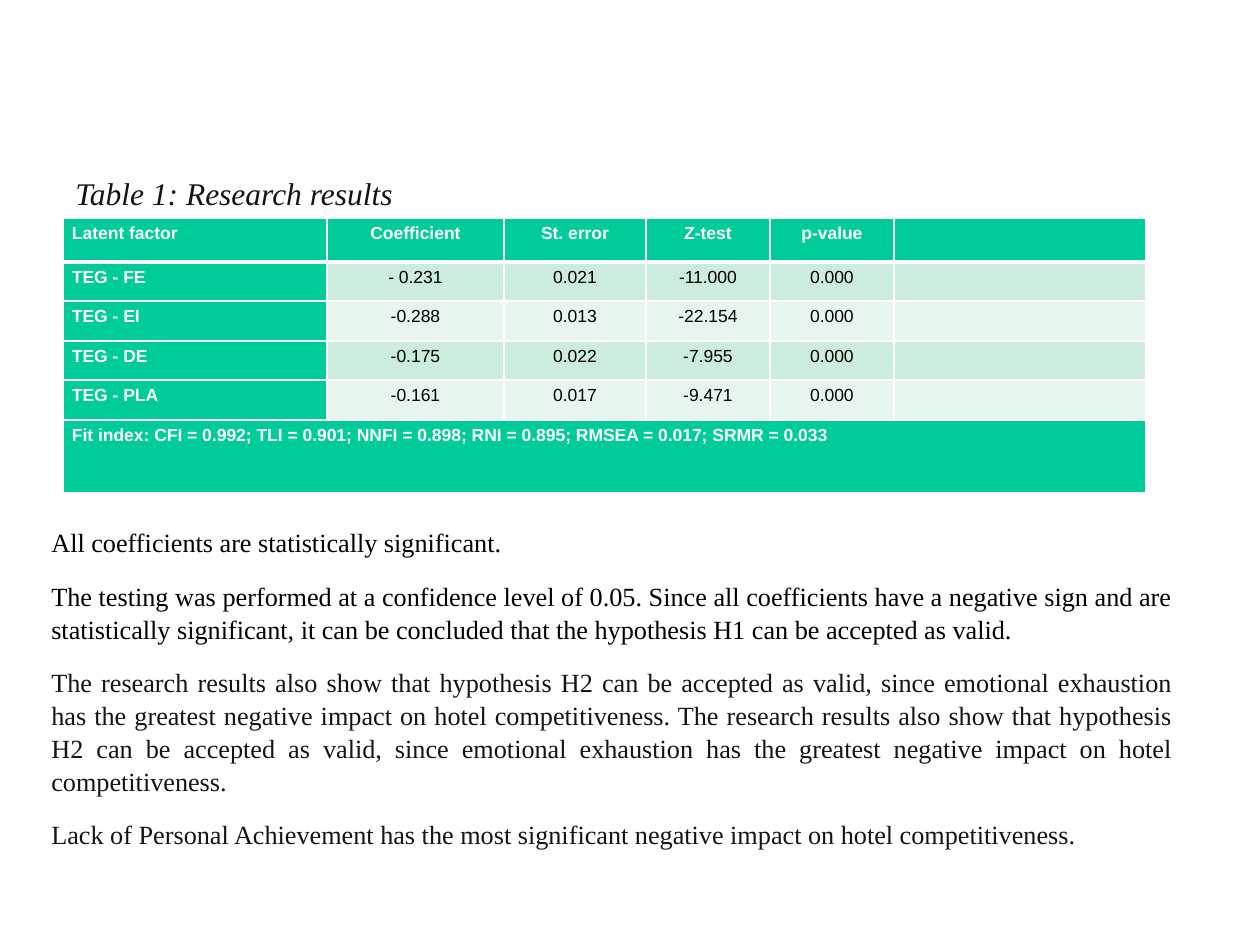
from lxml import etree
from pptx import Presentation
from pptx.dml.color import RGBColor
from pptx.enum.text import MSO_ANCHOR, PP_ALIGN
from pptx.oxml.ns import qn
from pptx.util import Pt

PX = 914400 / 126
TOP, BOTTOM = MSO_ANCHOR.TOP, MSO_ANCHOR.BOTTOM
LEFT, CENTER, JUSTIFY = PP_ALIGN.LEFT, PP_ALIGN.CENTER, PP_ALIGN.JUSTIFY

WHITE = RGBColor(0xFF, 0xFF, 0xFF)
BLACK = RGBColor(0x00, 0x00, 0x00)
INK = RGBColor(0x12, 0x15, 0x12)
GREEN = RGBColor(0x00, 0xCC, 0x99)
BANDS = (RGBColor(0xE7, 0xF5, 0xEF), RGBColor(0xCC, 0xEC, 0xDD))

COLUMNS = [264, 177, 142, 124, 124, 252]
HEIGHTS = [44, 39, 40, 39, 40, 73]
RESULTS = [
    ["Latent factor", "Coefficient", "St. error", "Z-test", "p-value", ""],
    ["TEG - FE", "- 0.231", "0.021", "-11.000", "0.000", ""],
    ["TEG - EI", "-0.288", "0.013", "-22.154", "0.000", ""],
    ["TEG - DE", "-0.175", "0.022", "-7.955", "0.000", ""],
    ["TEG - PLA", "-0.161", "0.017", "-9.471", "0.000", ""],
    ["Fit index: CFI = 0.992; TLI = 0.901; NNFI = 0.898; RNI = 0.895; "
     "RMSEA = 0.017; SRMR = 0.033", "", "", "", "", ""],
]
FINDINGS = [
    ("All coefficients are statistically significant.", BLACK),
    ("The testing was performed at a confidence level of 0.05. Since all coefficients "
     "have a negative sign and are statistically significant, it can be concluded that "
     "the hypothesis H1 can be accepted as valid.", BLACK),
    ("The research results also show that hypothesis H2 can be accepted as valid, since "
     "emotional exhaustion has the greatest negative impact on hotel competitiveness. "
     "The research results also show that hypothesis H2 can be accepted as valid, since "
     "emotional exhaustion has the greatest negative impact on hotel competitiveness.", INK),
    ("Lack of Personal Achievement has the most significant negative impact on hotel "
     "competitiveness.", INK),
]


def px(n):
    """Turn pixels into EMU."""
    return round(n * PX)


def set_font(p, name, size, color, bold=False, italic=False):
    """Set the font of a whole paragraph."""
    f = p.font
    f.name, f.size, f.bold, f.italic = name, Pt(size), bold, italic
    f.color.rgb = color


def add_text(s, box, paragraphs, size, anchor, italic=False, spacing=1.0):
    """Place justified serif paragraphs in a box."""
    tf = s.shapes.add_textbox(*map(px, box)).text_frame
    tf.word_wrap = True
    tf.vertical_anchor = anchor
    for i, (text, color) in enumerate(paragraphs):
        p = tf.add_paragraph() if i else tf.paragraphs[0]
        p.text = text
        p.alignment = JUSTIFY
        p.line_spacing = spacing
        if i:
            p.space_before = Pt(11.5)
        set_font(p, "Times New Roman", size, color, italic=italic)


def add_borders(cell, top, bottom):
    """Draw white borders round a cell, with widths in points."""
    for side, width in (("L", 1), ("R", 1), ("T", top), ("B", bottom)):
        ln = etree.SubElement(cell._tc.get_or_add_tcPr(), qn(f"a:ln{side}"), w=str(Pt(width)))
        fill = etree.SubElement(ln, qn("a:solidFill"))
        etree.SubElement(fill, qn("a:srgbClr"), val=str(WHITE))


def fill_cell(cell, text, row, col):
    """Write and colour one cell by its place in the table."""
    heading = row in (0, len(RESULTS) - 1) or col == 0
    add_borders(cell, 3 if row == 1 else 1, 3 if row == 0 else 1)
    cell.fill.solid()
    cell.fill.fore_color.rgb = GREEN if heading else BANDS[row % 2]
    cell.margin_left = cell.margin_right = px(9)
    cell.margin_top = cell.margin_bottom = px(6)
    p = cell.text_frame.paragraphs[0]
    p.alignment = CENTER if col else LEFT
    if text:
        p.text = text
    else:
        etree.SubElement(p._p, qn("a:endParaRPr"), sz="1000")
    set_font(p, "Arial", 10, WHITE if heading else BLACK, bold=heading)


def add_results(s, left, top):
    """Place the table of research results."""
    shape = s.shapes.add_table(len(HEIGHTS), len(COLUMNS), px(left), px(top),
                               px(sum(COLUMNS)), px(sum(HEIGHTS)))
    table = shape.table
    for column, width in zip(table.columns, COLUMNS):
        column.width = px(width)
    for row, height in zip(table.rows, HEIGHTS):
        row.height = px(height)
    for r, values in enumerate(RESULTS):
        for c, text in enumerate(values):
            fill_cell(table.cell(r, c), text, r, c)
    last = len(HEIGHTS) - 1
    table.cell(last, 0).merge(table.cell(last, len(COLUMNS) - 1))


def main():
    """Build the slide and save it."""
    prs = Presentation()
    prs.slide_width, prs.slide_height = px(1260), px(945)
    s = prs.slides.add_slide(prs.slide_layouts[6])
    add_text(s, (63, 165, 415, 53), [("Table 1: Research results", INK)], 18, BOTTOM, italic=True)
    add_results(s, 63, 218)
    add_text(s, (39, 519, 1147, 262), FINDINGS, 15, TOP, spacing=1.05)
    prs.save("out.pptx")


if __name__ == "__main__":
    main()
